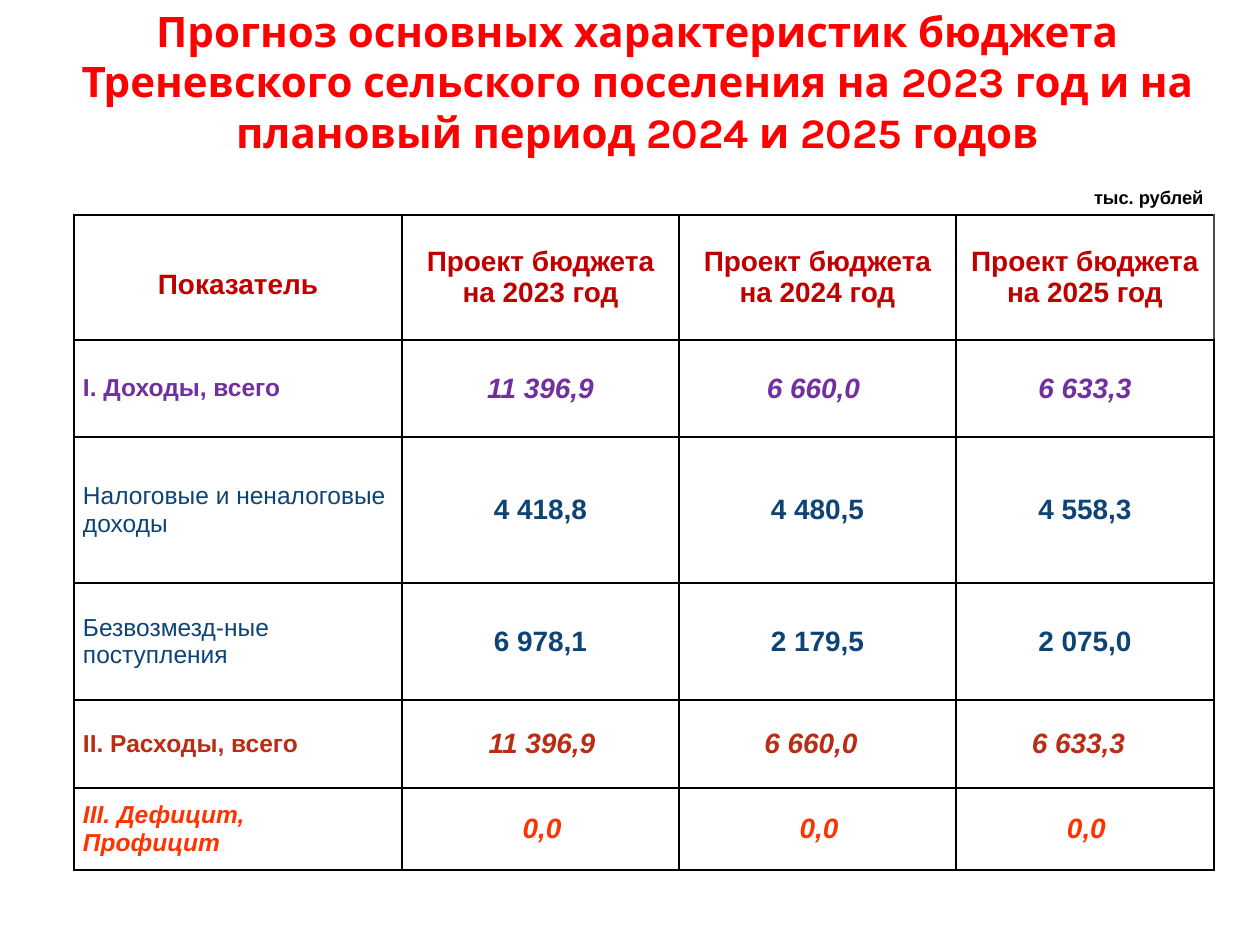
"""Build the slide with the settlement budget forecast for 2023-2025."""
from lxml import etree
from pptx import Presentation
from pptx.dml.color import RGBColor
from pptx.enum.text import MSO_ANCHOR, MSO_AUTO_SIZE, PP_ALIGN
from pptx.oxml.ns import qn
from pptx.util import Pt

PX = 914400 / 126
LEFT, CENTER, RIGHT = PP_ALIGN.LEFT, PP_ALIGN.CENTER, PP_ALIGN.RIGHT
MIDDLE = MSO_ANCHOR.MIDDLE
NO_FIT, GROW = MSO_AUTO_SIZE.NONE, MSO_AUTO_SIZE.SHAPE_TO_FIT_TEXT
BLACK = "000000"


def px(count):
    return round(count * PX)


def write(frame, text, color, align, **font):
    frame.text = text
    for paragraph in frame.paragraphs:
        paragraph.alignment = align
        for run in paragraph.runs:
            run.font.color.rgb = RGBColor.from_string(color)
            for name, value in font.items():
                setattr(run.font, name, value)


deck = Presentation()
deck.slide_width, deck.slide_height = px(1260), px(945)
slide = deck.slides.add_slide(deck.slide_layouts[5])

title = slide.shapes.title
title.left, title.top, title.width, title.height = map(px, (15, 26, 1245, 110))
title.text_frame.auto_size = NO_FIT
title.text_frame.vertical_anchor = MIDDLE
write(title.text_frame,
      "Прогноз основных характеристик бюджета Треневского сельского поселения "
      "на 2023 год и на плановый период 2024 и 2025 годов",
      "FF0000", CENTER, name="Karla", size=Pt(24), bold=True)

unit = slide.shapes.add_textbox(*map(px, (1037, 180, 179, 35)))
unit.text_frame.word_wrap = True
unit.text_frame.auto_size = GROW
write(unit.text_frame, "тыс. рублей", BLACK, RIGHT, name="Arial", size=Pt(10.5), bold=True)

plain, bold = {"bold": False, "italic": False}, {"bold": True, "italic": False}
slanted = {"bold": True, "italic": True}
headings = ["Показатель"] + [f"Проект бюджета на {year} год" for year in (2023, 2024, 2025)]
budget = [
    (125, "C00000", bold, bold, -9, headings),
    (97, "7030A0", bold, slanted, -9, ["I. Доходы, всего", "11 396,9", "6 660,0", "6 633,3"]),
    (146, "0E4475", plain, bold, -9,
     ["Налоговые и неналоговые доходы", "4 418,8", "4 480,5", "4 558,3"]),
    (117, "0E4475", plain, bold, -9,
     ["Безвозмезд-ные поступления", "6 978,1", "2 179,5", "2 075,0"]),
    (88, "B92D14", bold, slanted, 3, ["II. Расходы, всего", "11 396,9", "6 660,0", "6 633,3"]),
    (82, "FF3300", slanted, slanted, 3, ["III. Дефицит,\nПрофицит", "0,0", "0,0", "0,0"]),
]
column_widths = [328, 277, 277, 258]
right_offsets = {(1, 2): 8, (4, 2): 16, (4, 3): 16}

table = slide.shapes.add_table(len(budget), len(column_widths),
                               *map(px, (74, 215, sum(column_widths), 655))).table
table.first_row = table.horz_banding = False
for column, width in zip(table.columns, column_widths):
    column.width = px(width)

for r, (height, color, label_style, value_style, indent, texts) in enumerate(budget):
    table.rows[r].height = px(height)
    for c, text in enumerate(texts):
        cell = table.cell(r, c)
        cell.vertical_anchor = MIDDLE
        cell.margin_left = px(9)
        cell.margin_right = px(9 + right_offsets.get((r, c), 0))
        cell.margin_top = cell.margin_bottom = 0
        is_label = c == 0 and r > 0
        write(cell.text_frame, text, color, LEFT if is_label else CENTER, name="Arial",
              size=Pt(14 if is_label else 16), **(label_style if c == 0 else value_style))
        if (r == 0) == (c == 0):
            cell.text_frame.paragraphs[0]._p.get_or_add_pPr().set("indent", str(px(indent)))
        properties = cell._tc.get_or_add_tcPr()
        for side in ("lnL", "lnR", "lnT", "lnB"):
            border = etree.SubElement(properties, qn(f"a:{side}"), w=str(Pt(1)))
            fill = etree.SubElement(border, qn("a:solidFill"))
            outer_right = (r, c, side) == (0, 3, "lnR")
            etree.SubElement(fill, qn("a:srgbClr"), val="4D4D4D" if outer_right else BLACK)
        cell.fill.background()
table.cell(0, 0).text_frame.paragraphs[0].line_spacing = 1.5

deck.save("out.pptx")
